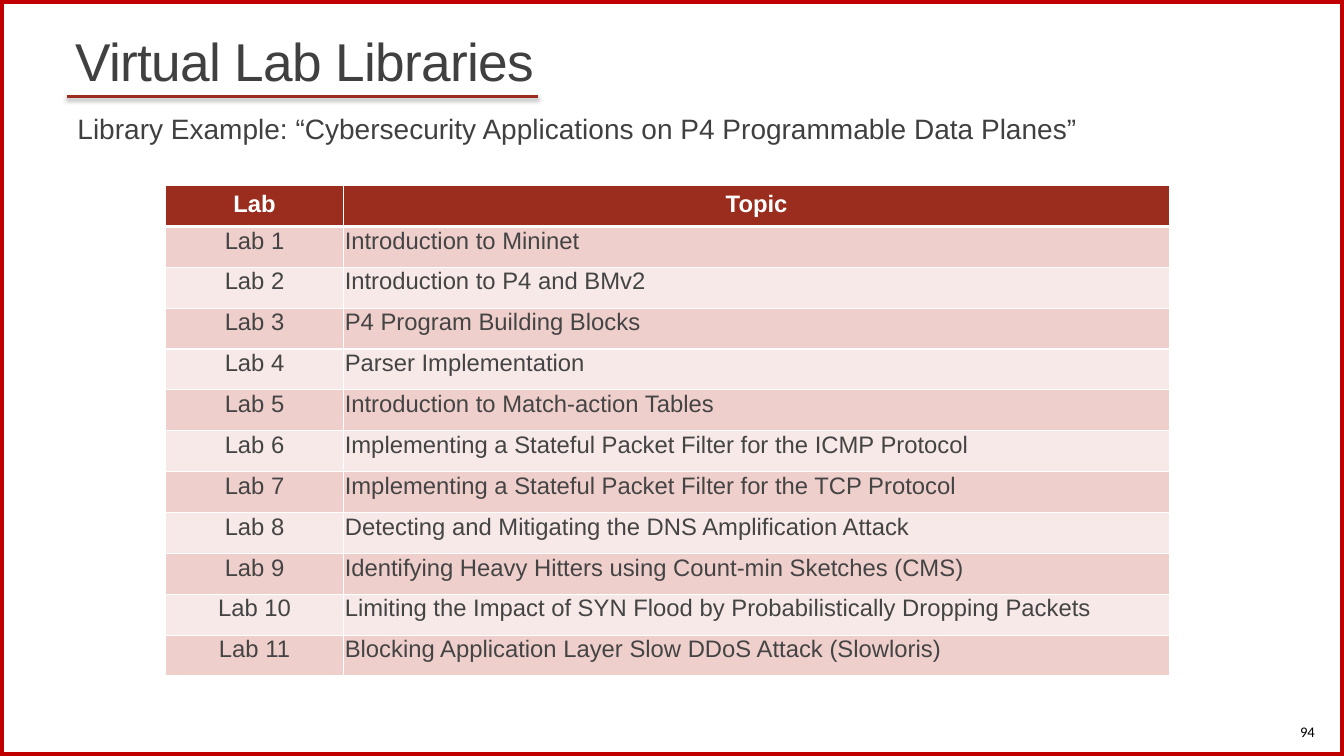
from lxml import etree
from pptx import Presentation
from pptx import oxml
from pptx import util as u
from pptx.dml.color import RGBColor
from pptx.enum import shapes, text
from pptx.oxml import ns

WHITE = RGBColor(0xFF, 0xFF, 0xFF)
BLACK = RGBColor(0x00, 0x00, 0x00)
FRAME_RED = RGBColor(0xC0, 0x00, 0x00)
BRICK = RGBColor(0x9B, 0x2D, 0x1F)
DARK_GRAY = RGBColor(0x40, 0x40, 0x40)
CELL_GRAY = RGBColor(0x44, 0x44, 0x44)
BANDS = (RGBColor(0xEF, 0xCF, 0xCC), RGBColor(0xF7, 0xE9, 0xE8))

TOPICS = [
    "Introduction to Mininet",
    "Introduction to P4 and BMv2",
    "P4 Program Building Blocks",
    "Parser Implementation",
    "Introduction to Match-action Tables",
    "Implementing a Stateful Packet Filter for the ICMP Protocol",
    "Implementing a Stateful Packet Filter for the TCP Protocol",
    "Detecting and Mitigating the DNS Amplification Attack",
    "Identifying Heavy Hitters using Count-min Sketches (CMS)",
    "Limiting the Impact of SYN Flood by Probabilistically Dropping Packets",
    "Blocking Application Layer Slow DDoS Attack (Slowloris)",
]


class PageBuilder:
    """Draw styled elements on one page."""

    def __init__(self, page, font="Arial"):
        self.page = page
        self.font = font

    def style(self, para, size, color, align=text.PP_ALIGN.LEFT, bold=False, font=None):
        para.alignment = align
        for span in para.runs:
            span.font.name = font or self.font
            span.font.size = u.Pt(size)
            span.font.bold = bold
            span.font.color.rgb = color

    def frame(self, width, height, color, weight):
        box = self.page.shapes.add_shape(
            shapes.MSO_SHAPE.RECTANGLE, 0, 0, width, height)
        box.shadow.inherit = False
        box.fill.background()
        box.line.color.rgb = color
        box.line.width = u.Pt(weight)

    def label(self, place, words, size, color, anchor=text.MSO_ANCHOR.TOP, **look):
        box = self.page.shapes.add_textbox(*map(u.Inches, place))
        box.text_frame.word_wrap = True
        box.text_frame.vertical_anchor = anchor
        box.text_frame.text = words
        para = box.text_frame.paragraphs[0]
        self.style(para, size, color, **look)
        return para

    def underline(self, left, right, top, color, weight):
        line = self.page.shapes.add_connector(
            shapes.MSO_CONNECTOR.STRAIGHT,
            *map(u.Inches, (left, top, right, top)))
        line.line.color.rgb = color
        line.line.width = u.Pt(weight)
        line._element.spPr.append(oxml.parse_xml(
            f'<a:effectLst {ns.nsdecls("a")}>'
            f'<a:outerShdw blurRad="{u.Pt(3.1)}" dist="{u.Pt(1.6)}" dir="5400000" rotWithShape="0">'
            f'<a:srgbClr val="{BLACK}"><a:alpha val="38000"/></a:srgbClr>'
            '</a:outerShdw></a:effectLst>'))

    def borders(self, cell, **weights):
        properties = cell._tc.get_or_add_tcPr()
        for side in "LRTB":
            edge = etree.SubElement(
                properties, ns.qn(f"a:ln{side}"), w=str(u.Pt(weights.get(side, 1))))
            fill = etree.SubElement(edge, ns.qn("a:solidFill"))
            etree.SubElement(fill, ns.qn("a:srgbClr"), val=str(WHITE))

    def table(self, place, widths, rows, size):
        grid = self.page.shapes.add_table(
            len(rows), len(widths), *map(u.Inches, place)).table
        for column, width in zip(grid.columns, widths):
            column.width = u.Inches(width)
        for i, row in enumerate(rows):
            header = i == 0
            for j, words in enumerate(row):
                cell = grid.cell(i, j)
                cell.text = words
                centred = header or j == 0
                self.style(cell.text_frame.paragraphs[0], size,
                           WHITE if header else CELL_GRAY,
                           text.PP_ALIGN.CENTER if centred else text.PP_ALIGN.LEFT,
                           bold=header)
                if not header:
                    cell.margin_left = cell.margin_right = u.Inches(0.01)
                    cell.margin_top = cell.margin_bottom = u.Inches(0.01)
                self.borders(cell, T=3 if i == 1 else 1, B=3 if header else 1)
                cell.fill.solid()
                cell.fill.fore_color.rgb = BRICK if header else BANDS[(i - 1) % 2]


def main():
    deck = Presentation()
    deck.slide_width = u.Inches(13.33)
    deck.slide_height = u.Inches(7.5)
    builder = PageBuilder(deck.slides.add_slide(deck.slide_layouts[6]))

    builder.frame(deck.slide_width, deck.slide_height, FRAME_RED, 6)
    title = builder.label((0.65, 0, 12.01, 0.97), "Virtual Lab Libraries", 38,
                          DARK_GRAY, text.MSO_ANCHOR.BOTTOM)
    title.line_spacing = 0.85
    title.runs[0].font._element.set("spc", "-50")
    builder.underline(0.66, 5.34, 0.96, BRICK, 2)
    builder.label((11.71, 7.06, 1.43, 0.4), "94", 10.5, BLACK,
                  text.MSO_ANCHOR.MIDDLE, align=text.PP_ALIGN.RIGHT, font="Calibri")
    builder.label(
        (0.67, 1.06, 11.9, 0.44),
        "Library Example: “Cybersecurity Applications on P4 Programmable Data Planes”",
        20, DARK_GRAY)
    labs = [(f"Lab {number}", topic) for number, topic in enumerate(TOPICS, 1)]
    builder.table((1.64, 1.84, 9.96, 4.87), (1.77, 8.19),
                  [("Lab", "Topic")] + labs, 17)
    deck.save("out.pptx")


if __name__ == "__main__":
    main()
